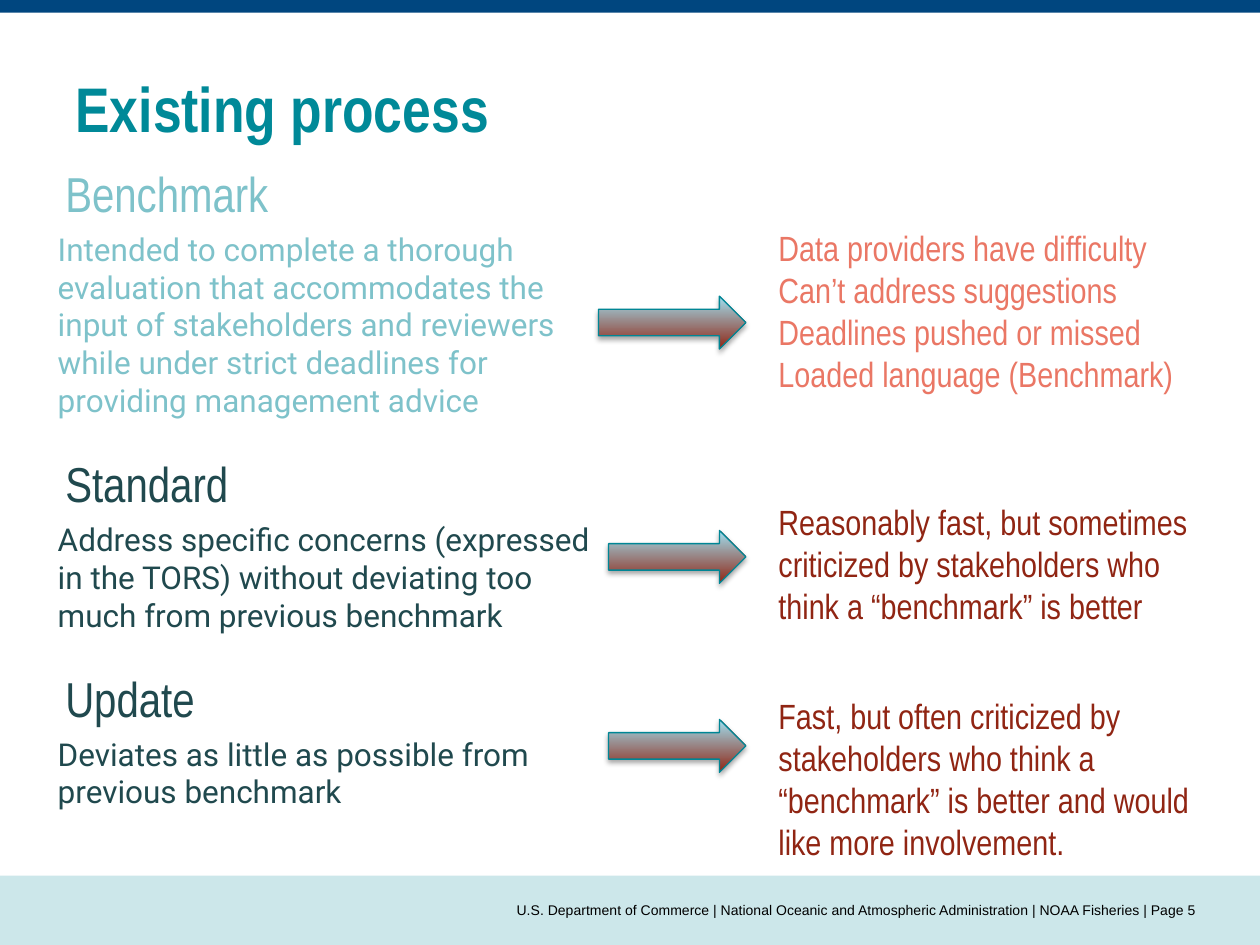
import pptx
import pptx.util
import pptx.dml.color
import pptx.enum.shapes
import pptx.enum.text
import pptx.oxml
import pptx.oxml.ns

Inches, Pt = pptx.util.Inches, pptx.util.Pt
RGB = pptx.dml.color.RGBColor.from_string
SHAPE = pptx.enum.shapes.MSO_SHAPE
ALIGN = pptx.enum.text.PP_ALIGN
ANCHOR = pptx.enum.text.MSO_ANCHOR

# Content
TITLE = "Existing process"
FOOTER = ("U.S. Department of Commerce | National Oceanic and Atmospheric "
          "Administration | NOAA Fisheries | Page 5")
TYPES = [
    ("Benchmark", "Intended to complete a thorough evaluation that accommodates "
     "the input of stakeholders and reviewers while under strict deadlines for "
     "providing management advice", "pale"),
    ("Standard", "Address specific concerns (expressed in the TORS) without "
     "deviating too much from previous benchmark", "dark"),
    ("Update", "Deviates as little as possible from previous benchmark", "dark"),
]
# Outcome lines, colour, text box top and height, arrow left and top
ISSUES = [
    (["Data providers have difficulty", "Can’t address suggestions",
      "Deadlines pushed or missed", "Loaded language (Benchmark)"],
     "coral", 1.75, 1.75, 4.75, 2.35),
    (["Reasonably fast, but sometimes criticized by stakeholders who think "
      "a “benchmark” is better"], "rust", 3.92, 1.41, 4.83, 4.21),
    (["Fast, but often criticized by stakeholders who think a “benchmark” is "
      "better and would like more involvement."], "rust", 5.46, 1.75, 4.83, 5.71),
]

THEME = {
    "color": {"navy": "00467F", "mist": "CCE7EA", "teal": "008998",
              "pale": "7EC2CA", "dark": "20494E", "coral": "EA7765",
              "rust": "902513", "sky": "A0E0F1", "edge": "008695",
              "black": "000000"},
    # Font, size, bold
    "type": {"title": ("Arial Narrow", 36, True),
             "head": ("Arial Narrow", 28, False),
             "body": ("Roboto", 18, False),
             "issue": ("Arial Narrow", 20, False),
             "foot": ("Arial", 8, False)},
}
ARROW_END = 5.92


def tint(name):
    return RGB(THEME["color"][name])


def write(par, text, style, color):
    run = par.add_run()
    run.text = text
    font = run.font
    font.name, size, font.bold = THEME["type"][style]
    font.size = Pt(size)
    font.color.rgb = tint(color)


def add_box(slide, left, top, width, height):
    box = slide.shapes.add_textbox(*map(Inches, (left, top, width, height)))
    box.text_frame.word_wrap = True
    return box.text_frame


def next_par(frame, first):
    return frame.paragraphs[0] if first else frame.add_paragraph()


def add_band(slide, top, height, color):
    band = slide.shapes.add_shape(SHAPE.RECTANGLE, 0, Inches(top),
                                  Inches(10), Inches(height))
    band.shadow.inherit = False
    band.fill.solid()
    band.fill.fore_color.rgb = tint(color)
    band.line.fill.background()


def add_arrow(slide, left, top):
    arrow = slide.shapes.add_shape(SHAPE.RIGHT_ARROW, Inches(left), Inches(top),
                                   Inches(ARROW_END - left), Inches(0.42))
    arrow.fill.gradient()
    arrow.fill.gradient_angle = 90
    for stop, color in zip(arrow.fill.gradient_stops, ("rust", "sky")):
        stop.color.rgb = tint(color)
    arrow.line.color.rgb = tint("edge")
    arrow.line.width = Pt(0.75)
    # Soft shadow straight below
    arrow.shadow.inherit = False
    effects = arrow._element.spPr.find(pptx.oxml.ns.qn("a:effectLst"))
    effects.append(pptx.oxml.parse_xml(
        f'<a:outerShdw {pptx.oxml.ns.nsdecls("a")} blurRad="{Pt(3.1)}" '
        f'dist="{Pt(1.8)}" dir="5400000" rotWithShape="0"><a:srgbClr val="000000">'
        '<a:alpha val="35000"/></a:srgbClr></a:outerShdw>'))


def add_types(slide):
    frame = add_box(slide, -0.08, 1.25, 5, 4.95)
    for i, (name, about, color) in enumerate(TYPES):
        head = next_par(frame, i == 0)
        if i:
            head.space_before = Pt(20)
        body = frame.add_paragraph()
        body.space_before = Pt(4.2)
        for par, text, style, indent in ((head, name, "head", 0.5),
                                         (body, about, "body", 0.44)):
            par._p.get_or_add_pPr().set("marL", str(Inches(indent)))
            write(par, text, style, color)


def main():
    deck = pptx.Presentation()
    deck.slide_width, deck.slide_height = Inches(10), Inches(7.5)
    slide = deck.slides.add_slide(deck.slide_layouts[5])

    # Bands and footer
    add_band(slide, 6.95, 0.55, "mist")
    add_band(slide, 0, 0.1, "navy")
    foot = add_box(slide, 2.5, 6.95, 7, 0.55)
    foot.margin_left = foot.margin_right = 0
    foot.vertical_anchor = ANCHOR.MIDDLE
    foot.paragraphs[0].alignment = ALIGN.RIGHT
    write(foot.paragraphs[0], FOOTER, "foot", "black")

    # Title
    title = slide.shapes.title
    title.left, title.top, title.width, title.height = map(
        Inches, (0.5, 0.5, 9, 0.74))
    frame = title.text_frame
    frame.auto_size = pptx.enum.text.MSO_AUTO_SIZE.NONE
    frame.vertical_anchor = ANCHOR.TOP
    frame.paragraphs[0].alignment = ALIGN.LEFT
    write(frame.paragraphs[0], TITLE, "title", "teal")

    # Assessment types, each with an arrow to its outcome
    add_types(slide)
    for lines, color, top, height, left, mid in ISSUES:
        add_arrow(slide, left, mid)
        frame = add_box(slide, 6.08, top, 3.5, height)
        for i, line in enumerate(lines):
            write(next_par(frame, i == 0), line, "issue", color)

    deck.save("out.pptx")


if __name__ == "__main__":
    main()
